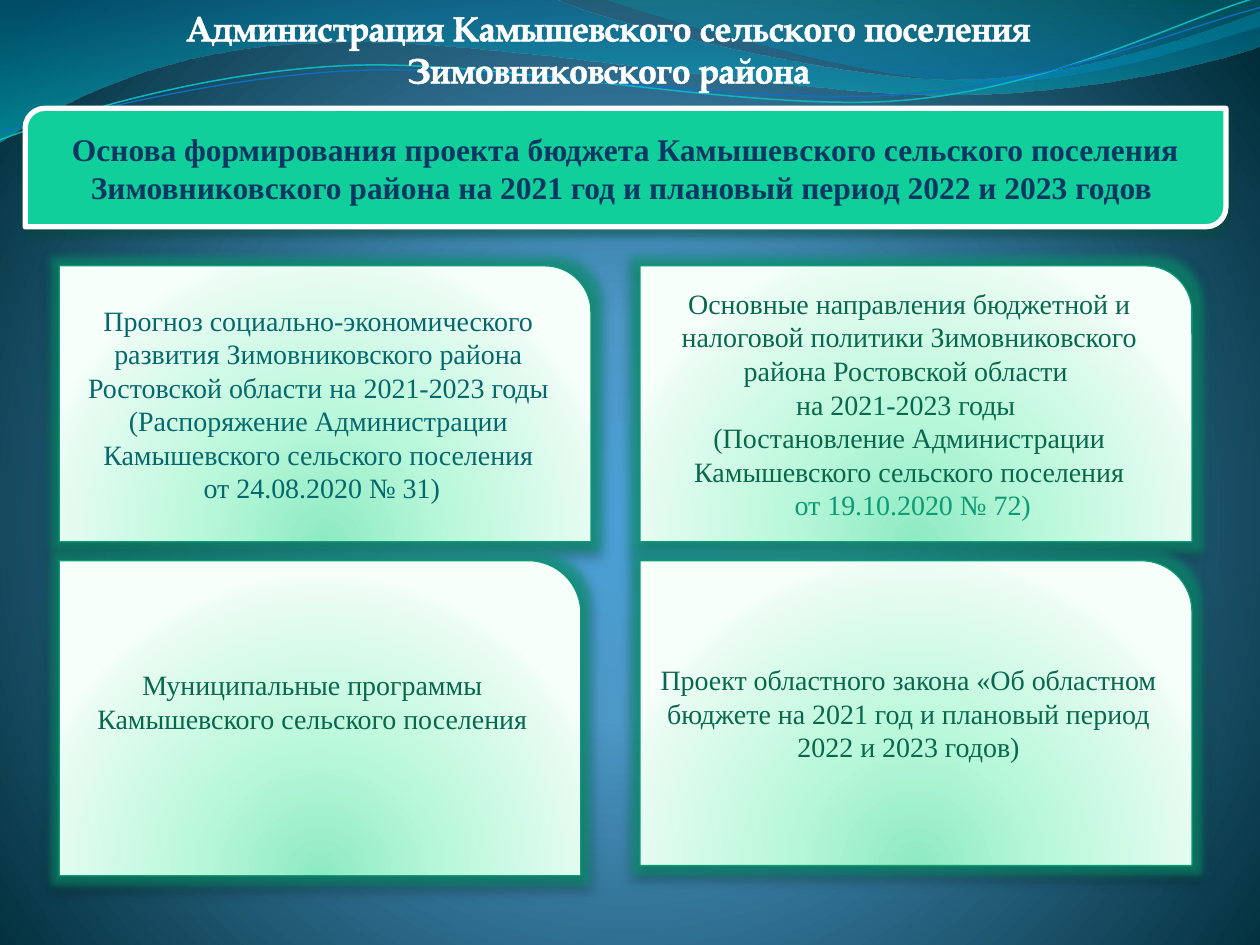
from dataclasses import dataclass

from lxml import etree
from pptx import Presentation, util as u
from pptx.dml.color import RGBColor
from pptx.enum import shapes, text
from pptx.oxml.ns import nsdecls, qn

Point = tuple[float, float]
Stop = tuple[int, str, int]  # position %, colour, opacity %

SERIF = "Times New Roman"
WHITE = "FFFFFF"
GREEN = "08684E"
EDGE = "0A9B74"
CARD_STOPS = [(0, "8DEAC2", 100), (43, "BAF8DB", 100),
              (93, "EAFCF3", 100), (100, "F7FFFB", 100)]
CARD_FOCUS = (50, 130, 50, -30)


@dataclass
class Card:
    left: float
    top: float
    width: float
    height: float
    lines: list[str]
    color: str = GREEN
    last_color: str = ""
    bottom_inset: float = 0.05


@dataclass
class Wave:
    """Outline of straight (2 numbers) and cubic (6 numbers) segments."""
    start: Point
    segments: list[tuple[float, ...]]
    stops: list[Stop] | None = None
    line: str = ""
    weight: float = 0


WAVES = [
    Wave((0, 0), [(4.4, -0.01), (4.76, 0.17, 6.64, 0.63, 7.58, 0.63),
                  (8.53, 0.63, 9.58, 0.26, 10, 0.09), (10.01, 0.36),
                  (9.83, 0.44, 8.7, 0.76, 7.46, 0.75),
                  (6.22, 0.75, 3.82, 0.28, 2.57, 0.34),
                  (1.29, 0.36, 0.46, 0.83, -0.01, 1.13)],
         stops=[(0, "0074A1", 45), (100, "00C6CF", 55)]),
    Wave((4.79, -0.01), [(5.09, 0.11, 6.82, 0.62, 7.69, 0.65),
                         (8.56, 0.69, 9.61, 0.32, 10, 0.21), (10, 0)],
         stops=[(0, "00A1A9", 30), (80, "008BBF", 45)]),
    Wave((0, 1.11), [(0.48, 0.93, 1.58, 0.57, 2.77, 0.52),
                     (3.95, 0.47, 5.93, 0.89, 7.13, 0.8),
                     (8.33, 0.71, 9.38, 0.15, 9.98, -0.02)],
         line="0AB8BF", weight=0.85),
    Wave((0, 1.04), [(0.47, 0.96, 1.64, 0.61, 2.83, 0.56),
                     (4.03, 0.51, 5.97, 0.84, 7.17, 0.75),
                     (8.36, 0.67, 9.41, 0.21, 10, 0.06)],
         line="0F6FC6", weight=0.75),
]

CARDS = [
    Card(0.47, 2.11, 4.22, 2.19,
         ["Прогноз социально-экономического развития Зимовниковского района "
          "Ростовской области на 2021-2023 годы",
          "(Распоряжение Администрации Камышевского сельского поселения",
          " от 24.08.2020 № 31)"], color="06686C"),
    Card(5.08, 2.11, 4.38, 2.19,
         ["Основные направления бюджетной и налоговой политики "
          "Зимовниковского района Ростовской области ",
          "на 2021-2023 годы ",
          "(Постановление Администрации Камышевского сельского поселения",
          " от 19.10.2020 № 72)"], last_color="0C9B74"),
    Card(0.47, 4.45, 4.14, 2.5,
         ["Муниципальные программы", "Камышевского сельского поселения"],
         bottom_inset=0.32),
    Card(5.08, 4.45, 4.38, 2.42,
         ["Проект областного закона «Об областном бюджете на 2021 год и "
          "плановый период 2022 и 2023 годов)"]),
]


def rgb(color: str) -> RGBColor:
    return RGBColor.from_string(color)


def xml(markup: str):
    """Parse one DrawingML element, given without its namespace."""
    tag, rest = markup.split(">", 1)
    return etree.fromstring(f"{tag} {nsdecls('a')}>{rest}")


def color_xml(color: str, opacity: int) -> str:
    return f'<a:srgbClr val="{color}"><a:alpha val="{opacity * 1000}"/></a:srgbClr>'


def set_gradient(fill, props, stops: list[Stop], focus=None) -> None:
    """Fill with a vertical gradient, or a circular one around focus."""
    fill.solid()
    gs = "".join(f'<a:gs pos="{pos * 1000}">{color_xml(color, opacity)}</a:gs>'
                 for pos, color, opacity in stops)
    shade = '<a:lin ang="5400000" scaled="1"/>'
    if focus:
        rect = " ".join(f'{side}="{v * 1000}"' for side, v in zip("ltrb", focus))
        shade = f'<a:path path="circle"><a:fillToRect {rect}/></a:path>'
    solid = props.find(qn("a:solidFill"))
    props.replace(solid, xml(
        f'<a:gradFill rotWithShape="1"><a:gsLst>{gs}</a:gsLst>{shade}</a:gradFill>'))


def set_effects(sp, color: str, opacity: int, blur: float, glow: str = "") -> None:
    """Cast a shadow 3 pt downwards, with an optional glow."""
    halo = f'<a:glow rad="{u.Pt(10)}">{color_xml(glow, 60)}</a:glow>' if glow else ""
    sp.shadow.inherit = False
    props = sp.element.spPr
    props.replace(props.find(qn("a:effectLst")), xml(
        f'<a:effectLst>{halo}<a:outerShdw blurRad="{u.Pt(blur)}" dist="{u.Pt(3)}" '
        f'dir="5400000" rotWithShape="0">{color_xml(color, opacity)}'
        '</a:outerShdw></a:effectLst>'))


def bend(sp, segments: list[tuple[float, ...]]) -> None:
    """Join the three lines of each cubic segment into one curve."""
    lines = iter(list(sp.element.iter(qn("a:lnTo"))))
    for seg in segments:
        first = next(lines)
        if len(seg) == 6:
            first.tag = qn("a:cubicBezTo")
            for line in (next(lines), next(lines)):
                first.append(line[0])
                line.getparent().remove(line)


def add_wave(slide, wave: Wave) -> None:
    points = [wave.start] + [seg[i:i + 2] for seg in wave.segments
                             for i in range(0, len(seg), 2)]
    emu = [(u.Inches(x), u.Inches(y)) for x, y in points]
    builder = slide.shapes.build_freeform(*emu[0])
    builder.add_line_segments(emu[1:], close=bool(wave.stops))
    sp = builder.convert_to_shape()
    bend(sp, wave.segments)
    sp.shadow.inherit = False
    if wave.stops:
        set_gradient(sp.fill, sp.element.spPr, wave.stops)
        sp.line.fill.background()
    else:
        sp.fill.background()
        sp.line.color.rgb = rgb(wave.line)
        sp.line.width = u.Pt(wave.weight)


def write(tf, lines: list[str], size: int, color: str,
          font: str = SERIF, bold: bool = False) -> None:
    tf.word_wrap = True
    tf.text = "\n".join(lines)
    for p in tf.paragraphs:
        p.alignment = text.PP_ALIGN.CENTER
        p.font.size, p.font.name, p.font.bold = u.Pt(size), font, bold
        p.font.color.rgb = rgb(color)


def add_box(slide, kind, box: tuple[float, ...], line: str, weight: float):
    sp = slide.shapes.add_shape(kind, *map(u.Inches, box))
    sp.line.color.rgb = rgb(line)
    sp.line.width = u.Pt(weight)
    sp.text_frame.vertical_anchor = text.MSO_ANCHOR.MIDDLE
    return sp


def add_banner(slide) -> None:
    sp = add_box(slide, shapes.MSO_SHAPE.ROUND_2_DIAG_RECTANGLE,
                 (0.2, 0.86, 9.53, 0.94), WHITE, 3)
    sp.fill.solid()
    sp.fill.fore_color.rgb = rgb("10CF9B")
    set_effects(sp, "044A37", 48, 4.5)
    write(sp.text_frame,
          ["Основа формирования проекта бюджета Камышевского сельского поселения "
           "Зимовниковского района на 2021 год и плановый период 2022 и 2023 годов "],
          18, "083763", bold=True)


def add_card(slide, card: Card) -> None:
    sp = add_box(slide, shapes.MSO_SHAPE.ROUND_1_RECTANGLE,
                 (card.left, card.top, card.width, card.height), EDGE, 0.75)
    set_gradient(sp.fill, sp.element.spPr, CARD_STOPS, CARD_FOCUS)
    set_effects(sp, "000000", 40, 5.2, glow=EDGE)
    tf = sp.text_frame
    tf.margin_bottom = u.Inches(card.bottom_inset)
    write(tf, card.lines, 16, card.color)
    if card.last_color:
        tf.paragraphs[-1].font.color.rgb = rgb(card.last_color)


def set_title(slide) -> None:
    """Fill in the title and bring it in front of the waves."""
    sp = slide.shapes.title
    sp.left, sp.top, sp.width, sp.height = map(u.Inches, (0.75, 0, 8.16, 0.77))
    tf = sp.text_frame
    tf.auto_size = text.MSO_AUTO_SIZE.NONE
    tf.vertical_anchor = text.MSO_ANCHOR.TOP
    write(tf, ["Администрация Камышевского сельского поселения "
               "Зимовниковского района"], 20, WHITE, "TeX Gyre Pagella", True)
    outline = xml(f'<a:ln w="{u.Pt(1.45)}"><a:solidFill>{color_xml(WHITE, 100)}'
                  '</a:solidFill></a:ln>')
    tf.paragraphs[0].runs[0]._r.get_or_add_rPr().insert(0, outline)
    sp.element.getparent().append(sp.element)


def main() -> None:
    prs = Presentation()
    prs.slide_width, prs.slide_height = u.Inches(10), u.Inches(7.5)
    slide = prs.slides.add_slide(prs.slide_layouts[5])
    fill = slide.background.fill
    fill.solid()
    set_gradient(fill, slide.element.find(".//" + qn("p:bgPr")),
                 [(0, "4AA0D6", 100), (25, "4C98C7", 100), (100, "002C38", 100)],
                 (10, 110, 10, 100))
    for wave in WAVES:
        add_wave(slide, wave)
    add_banner(slide)
    for card in CARDS:
        add_card(slide, card)
    set_title(slide)
    prs.save("out.pptx")


if __name__ == "__main__":
    main()
